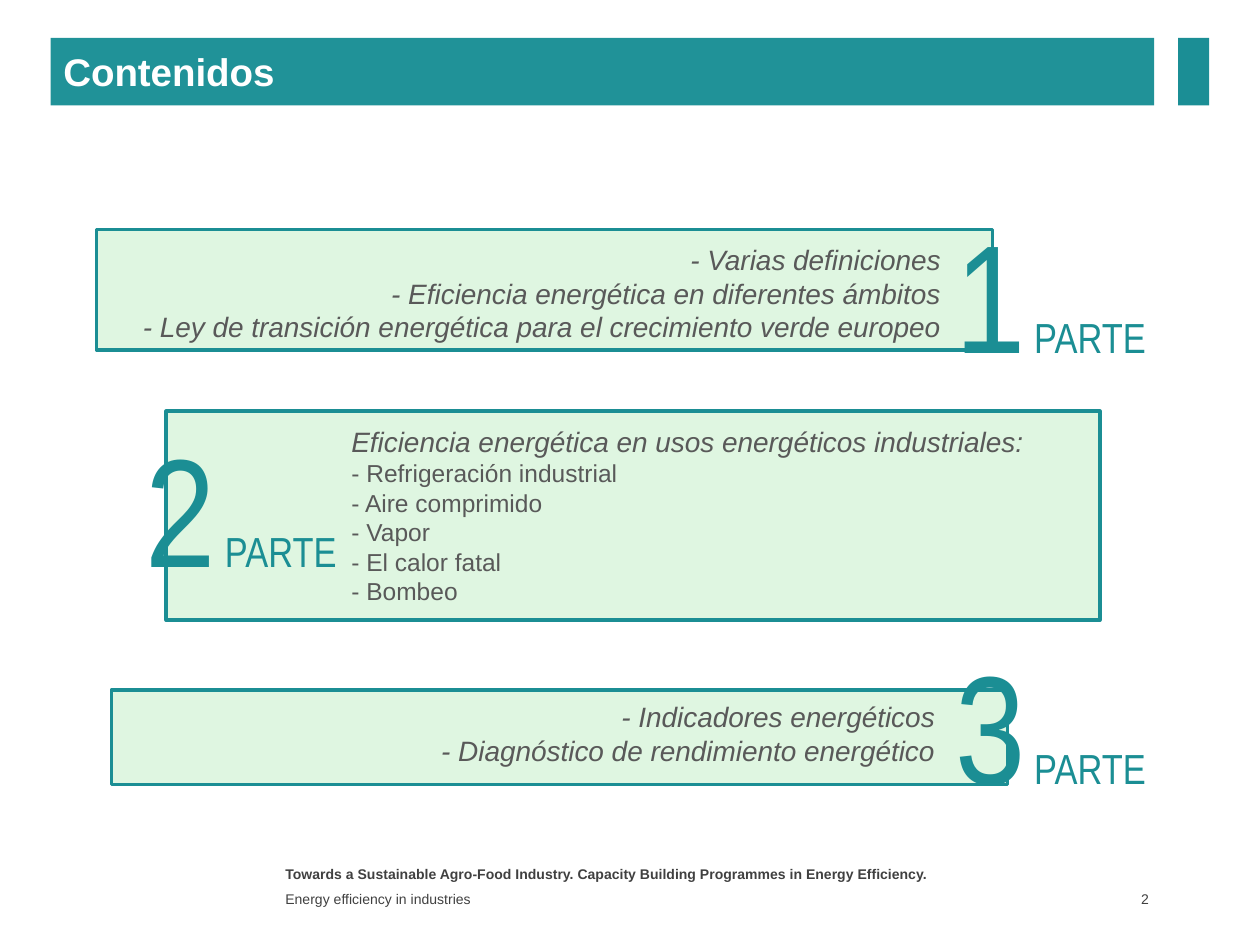
from dataclasses import dataclass

from lxml import etree
from pptx import Presentation
from pptx.dml.color import RGBColor
from pptx.enum.shapes import MSO_SHAPE as Shape
from pptx.enum.text import MSO_ANCHOR as Anchor, MSO_AUTO_SIZE as AutoSize, PP_ALIGN as Align
from pptx.oxml.ns import qn
from pptx.util import Pt


@dataclass(frozen=True)
class Theme:
    teal: str = "1B8E94"
    banner: str = "209298"
    accent: str = "1B8E95"
    panel: str = "86DE8D"
    white: str = "FFFFFF"
    body: str = "595959"
    footer: str = "404040"
    sans: str = "Arial"
    narrow: str = "Arial Narrow"
    title_size: int = 22
    numeral_size: int = 88
    part_size: int = 24
    topic_size: int = 16
    item_size: int = 14
    footer_size: int = 8


THEME = Theme()
TOPIC = dict(name=THEME.sans, size=THEME.topic_size, color=THEME.body, italic=True)
ITEM = {**TOPIC, "size": THEME.item_size, "italic": False}
FOOTER = dict(name=THEME.sans, size=THEME.footer_size, color=THEME.footer)
PART = dict(name=THEME.narrow, size=THEME.part_size, color=THEME.teal)
NUMERAL = {**PART, "size": THEME.numeral_size}
GAP = {**PART, "size": 22}
TITLE = dict(name=THEME.sans, size=THEME.title_size, color=THEME.white, bold=True)

# Each part: panel box, topics box, alignment, topics, numeral box
PARTS = [
    ((55.2, 131.2, 512, 69), (65.2, 135, 479.5, 65.5), Align.RIGHT,
     [("- Varias definiciones", TOPIC),
      ("- Eficiencia energética en diferentes ámbitos", TOPIC),
      ("- Ley de transición energética para el crecimiento verde europeo", TOPIC)],
     (538.8, 110.2, 152, 113.8)),
    ((95, 234.9, 533.5, 119.5), (193.7, 239.2, 411, 111.6), Align.LEFT,
     [("Eficiencia energética en usos energéticos industriales:", TOPIC),
      ("- Refrigeración industrial", ITEM),
      ("- Aire comprimido", ITEM),
      ("- Vapor", ITEM),
      ("- El calor fatal", ITEM),
      ("- Bombeo", ITEM)],
     (76.3, 232.6, 174.2, 113.8)),
    ((63.7, 394.2, 512, 54), (74, 396.4, 467.3, 46), Align.RIGHT,
     [("- Indicadores energéticos", TOPIC),
      ("- Diagnóstico de rendimiento energético", TOPIC)],
     (538.8, 356.8, 152, 113.8)),
]


def rgb(value):
    return RGBColor.from_string(value)


def points(box):
    return [Pt(length) for length in box]


def add_run(paragraph, text, style):
    run = paragraph.add_run()
    run.text = text
    for key, value in style.items():
        if key == "color":
            run.font.color.rgb = rgb(value)
        else:
            setattr(run.font, key, Pt(value) if key == "size" else value)


def add_text(slide, box, lines, align=Align.LEFT, **frame_format):
    """Add a text box; each line is a list of (text, style) runs."""
    frame = slide.shapes.add_textbox(*points(box)).text_frame
    for key, value in {"word_wrap": True, **frame_format}.items():
        setattr(frame, key, value)
    for index, line in enumerate(lines):
        paragraph = frame.add_paragraph() if index else frame.paragraphs[0]
        paragraph.alignment = align
        for text, style in line:
            add_run(paragraph, text, style)
    return frame


def add_block(slide, box, color):
    block = slide.shapes.add_shape(Shape.RECTANGLE, *points(box))
    block.shadow.inherit = False
    block.fill.solid()
    block.fill.fore_color.rgb = rgb(color)
    block.line.fill.background()
    return block


def add_panel(slide, box):
    panel = add_block(slide, box, THEME.panel)
    panel.line.color.rgb = rgb(THEME.teal)
    panel.line.width = Pt(2)
    fill_color = panel.fill._xPr.find(qn("a:solidFill"))[0]
    etree.SubElement(fill_color, qn("a:alpha"), val="26000")


def outline_white(run):
    properties = run.font._element
    outline = etree.Element(qn("a:ln"), w=str(Pt(0.75)))
    fill = etree.SubElement(outline, qn("a:solidFill"))
    etree.SubElement(fill, qn("a:srgbClr"), val=THEME.white)
    properties.insert(0, outline)


def add_part_label(slide, box, number):
    label = [(str(number), NUMERAL), (" ", GAP), ("PARTE", PART)]
    frame = add_text(slide, box, [label], auto_size=AutoSize.SHAPE_TO_FIT_TEXT)
    for run in frame.paragraphs[0].runs:
        outline_white(run)


def add_part(slide, number, panel, topics_box, align, topics, label_box):
    add_panel(slide, panel)
    add_text(slide, topics_box, [[topic] for topic in topics], align,
             auto_size=AutoSize.SHAPE_TO_FIT_TEXT)
    add_part_label(slide, label_box, number)


def format_title(slide):
    title = slide.shapes.title
    title.left, title.top, title.width, title.height = points((29, 21.6, 630.5, 38.6))
    title.fill.solid()
    title.fill.fore_color.rgb = rgb(THEME.banner)
    frame = title.text_frame
    frame.auto_size = AutoSize.NONE
    frame.vertical_anchor = Anchor.MIDDLE
    frame.paragraphs[0].alignment = Align.LEFT
    add_run(frame.paragraphs[0], "Contenidos", TITLE)


def add_footer(slide):
    add_text(slide, (156, 491, 396, 15),
             [[("Towards a Sustainable Agro-Food Industry. "
                "Capacity Building Programmes in Energy Efficiency.",
                {**FOOTER, "bold": True})]])
    add_text(slide, (156, 507, 396, 13.7),
             [[("Energy efficiency in industries", FOOTER)]],
             vertical_anchor=Anchor.MIDDLE)
    add_text(slide, (619.2, 506.2, 40.3, 14.4), [[("2", FOOTER)]], Align.RIGHT,
             vertical_anchor=Anchor.MIDDLE, margin_right=Pt(2.9))


def main():
    deck = Presentation()
    deck.slide_width, deck.slide_height = Pt(720), Pt(540)
    slide = deck.slides.add_slide(deck.slide_layouts[5])
    format_title(slide)
    add_block(slide, (673.2, 21.6, 17.8, 38.6), THEME.accent)
    add_footer(slide)
    for number, part in enumerate(PARTS, start=1):
        add_part(slide, number, *part)
    deck.save("out.pptx")


if __name__ == "__main__":
    main()
